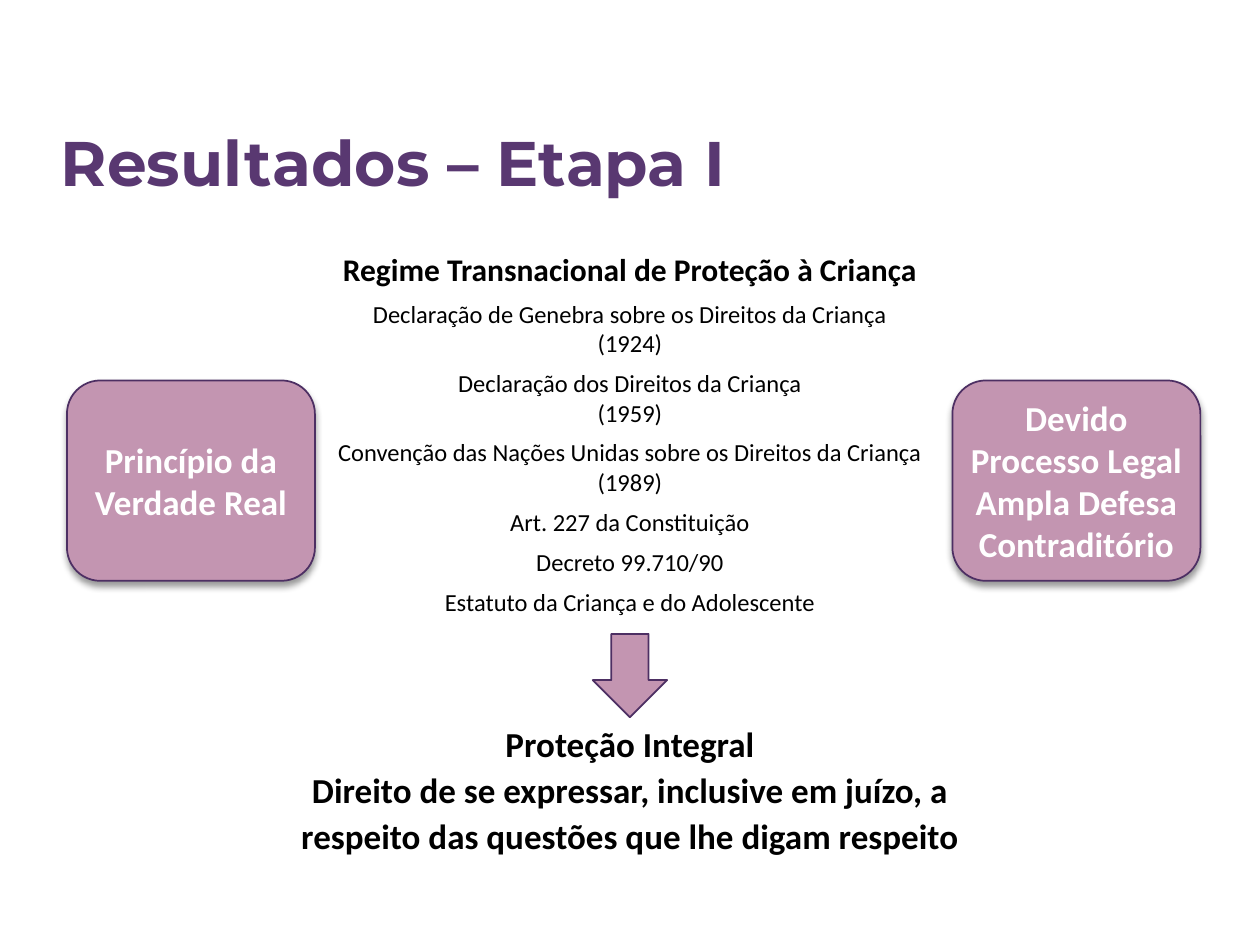
from lxml import etree
from pptx import Presentation
from pptx.dml.color import RGBColor
from pptx.enum.shapes import MSO_SHAPE
from pptx.enum.text import MSO_ANCHOR, PP_ALIGN
from pptx.oxml import parse_xml
from pptx.util import Cm, Pt

ROUNDED, DOWN_ARROW = MSO_SHAPE.ROUNDED_RECTANGLE, MSO_SHAPE.DOWN_ARROW
LEFT, CENTER = PP_ALIGN.LEFT, PP_ALIGN.CENTER
TOP, MIDDLE = MSO_ANCHOR.TOP, MSO_ANCHOR.MIDDLE

PURPLE = RGBColor(0x59, 0x38, 0x71)
OUTLINE = RGBColor(0x4D, 0x2F, 0x63)
PINK = RGBColor(0xC3, 0x95, 0xB1)
BLACK = RGBColor(0x00, 0x00, 0x00)
WHITE = RGBColor(0xFF, 0xFF, 0xFF)

SHADOW = (
    '<a:effectLst xmlns:a="http://schemas.openxmlformats.org/drawingml/2006/main">'
    '<a:outerShdw blurRad="50800" dist="38100" dir="5400000" rotWithShape="0">'
    '<a:srgbClr val="000000"><a:alpha val="40000"/></a:srgbClr>'
    '</a:outerShdw></a:effectLst>'
)

# Each group is kept together; the space comes after its last line
SOURCES = [
    ["Declaração de Genebra sobre os Direitos da Criança", "(1924)"],
    ["Declaração dos Direitos da Criança", "(1959)"],
    ["Convenção das Nações Unidas sobre os Direitos da Criança", "(1989)"],
    ["Art. 227 da Constituição"],
    ["Decreto 99.710/90"],
    ["Estatuto da Criança e do Adolescente"],
]


def write(tf, text, size, color, bold=False, align=CENTER, font="Calibri",
          spacing=1.0, after=0):
    """Fill the empty first paragraph, or add another one."""
    p = tf.paragraphs[0] if not tf.text else tf.add_paragraph()
    p.text = text
    p.alignment = align
    p.line_spacing = spacing
    p.space_before, p.space_after = Pt(0), Pt(after)
    p.font.name, p.font.size = font, Pt(size)
    p.font.bold, p.font.color.rgb = bold, color


def add_title(s, x, y, w, h):
    title = s.shapes.title
    title.left, title.top, title.width, title.height = Cm(x), Cm(y), Cm(w), Cm(h)
    tf = title.text_frame
    tf.word_wrap = True
    tf.vertical_anchor = MIDDLE
    write(tf, "Resultados – Etapa I", 36, PURPLE, True, LEFT, "Montserrat", 0.9)


def add_figure(s, kind, x, y, w, h):
    sp = s.shapes.add_shape(kind, Cm(x), Cm(y), Cm(w), Cm(h))
    sp.shadow.inherit = False
    sp.fill.solid()
    sp.fill.fore_color.rgb = PINK
    sp.line.color.rgb = OUTLINE
    sp.line.width = Pt(1)
    return sp


def add_principle(s, x, y, w, h, lines):
    sp = add_figure(s, ROUNDED, x, y, w, h)
    flat = sp.element.spPr.find("{*}effectLst")
    sp.element.spPr.replace(flat, parse_xml(etree.fromstring(SHADOW) is not None and SHADOW))
    tf = sp.text_frame
    tf.word_wrap = True
    tf.vertical_anchor = MIDDLE
    tf.margin_left = tf.margin_right = Cm(0.06)
    tf.margin_top = tf.margin_bottom = Cm(0)
    for line in lines:
        write(tf, line, 20, WHITE, True)


def add_text_box(s, x, y, w, h):
    tf = s.shapes.add_textbox(Cm(x), Cm(y), Cm(w), Cm(h)).text_frame
    tf.word_wrap = True
    tf.vertical_anchor = TOP
    return tf


def add_regime(s, x, y, w, h):
    """Legal sources, an arrow, and the protection they lead to."""
    tf = add_text_box(s, x, y, w, 7.7)
    write(tf, "Regime Transnacional de Proteção à Criança", 18, BLACK, True,
          spacing=0.9, after=6)
    for group in SOURCES:
        for line in group:
            write(tf, line, 14, BLACK, after=6 if line == group[-1] else 0)

    arrow_w = 1.5
    add_figure(s, DOWN_ARROW, x + (w - arrow_w) / 2, y + 7.78, arrow_w, 1.68)

    result_top = 9.35
    tf = add_text_box(s, x, y + result_top, w, h - result_top)
    for line in ["Proteção Integral",
                 "Direito de se expressar, inclusive em juízo, a respeito das "
                 "questões que lhe digam respeito"]:
        write(tf, line, 20, BLACK, True, spacing=1.1)


def main():
    prs = Presentation()
    prs.slide_width, prs.slide_height = Cm(25.4), Cm(19.05)
    s = prs.slides.add_slide(prs.slide_layouts[5])

    add_title(s, 0.97, 2.39, 18.8, 1.9)
    add_principle(s, 1.35, 7.67, 5, 4.04, ["Princípio da Verdade Real"])
    add_principle(s, 19.2, 7.67, 5, 4.04,
                  ["Devido Processo Legal", "Ampla Defesa", "Contraditório"])
    add_regime(s, 5.13, 5, 15.14, 12.5)

    prs.save("out.pptx")


if __name__ == "__main__":
    main()
